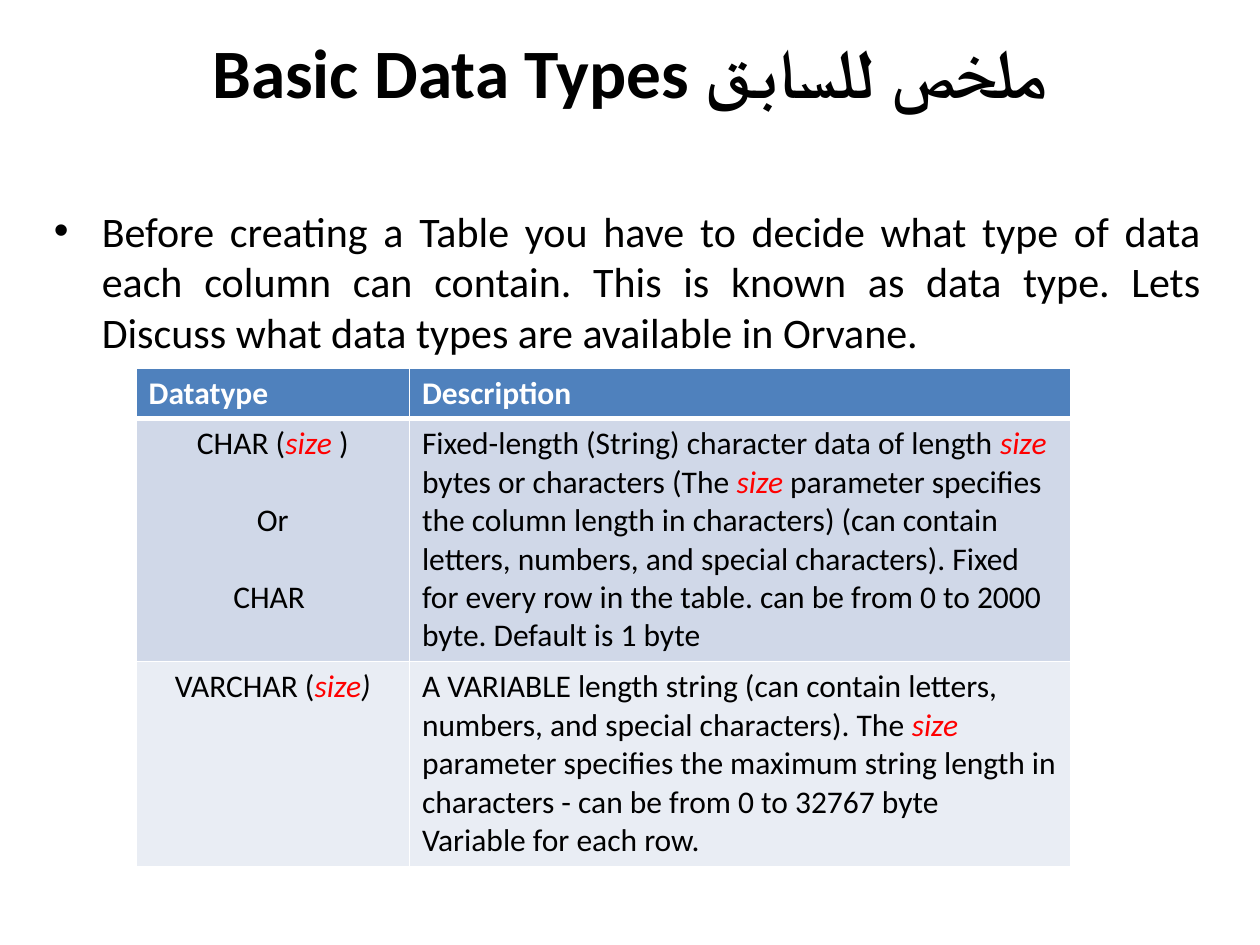
from lxml.etree import SubElement
from pptx import Presentation
from pptx.dml.color import RGBColor
from pptx.enum.text import MSO_ANCHOR, PP_ALIGN
from pptx.oxml.ns import qn
from pptx.util import Inches, Pt

COLORS = {
    "black": "000000", "white": "FFFFFF", "red": "FF0000",
    "head": "4F81BD", "odd": "D0D8E8", "even": "E9EDF4",
}
FONT = "Calibri"
SIZE = "size"  # mark for red italic runs
LINE = 22  # height in points of one table text line

# Each cell is a list of paragraphs, each paragraph a list of runs
ROWS = [
    ([["Datatype"]], [["Description"]]),
    (
        [["CHAR (", "size ", ")"], ["Or"], ["CHAR "]],
        [["Fixed-length (String) character data of length ", "size ",
          "bytes or characters (The ", "size ",
          "parameter specifies the column length in characters) (can contain "
          "letters, numbers, and special characters). Fixed for every row in "
          "the table. can be from 0 to 2000 byte. Default is 1 byte"]],
    ),
    (
        [["VARCHAR (", "size", ")"]],
        [["A VARIABLE length string (can contain letters, numbers, and "
          "special characters). The ", "size ",
          "parameter specifies the maximum string length in characters - "
          "can be from 0 to 32767 byte"],
         ["Variable for each row."]],
    ),
]


def rgb(name):
    return RGBColor.from_string(COLORS[name])


def add_run(para, text, size, color="black", bold=False, italic=False):
    run = para.add_run()
    run.text = text
    font = run.font
    font.name, font.size = FONT, Pt(size)
    font.bold, font.italic = bold, italic
    font.color.rgb = rgb(color)


def add_frame(slide, box):
    frame = slide.shapes.add_textbox(*map(Inches, box)).text_frame
    frame.word_wrap = True
    return frame


def add_title(slide, box):
    frame = add_frame(slide, box)
    frame.vertical_anchor = MSO_ANCHOR.MIDDLE
    para = frame.paragraphs[0]
    para.alignment = PP_ALIGN.CENTER
    add_run(para, "Basic Data Types ملخص للسابق", 39.6, bold=True)


def add_intro(slide, box):
    para = add_frame(slide, box).paragraphs[0]
    para.alignment = PP_ALIGN.JUSTIFY
    # Hanging bullet
    props = para._p.get_or_add_pPr()
    props.set("marL", str(Inches(0.38)))
    props.set("indent", str(Inches(-0.38)))
    SubElement(props, qn("a:buFont"), typeface="Arial")
    SubElement(props, qn("a:buChar"), char="•")
    add_run(para, "Before creating a Table you have to decide what type of data "
            "each column can contain. This is known as data type. Lets "
            "Discuss what data types are available in Orvane.", 24)


def add_edges(cell, head):
    props = cell._tc.get_or_add_tcPr()
    for side in "LRTB":
        width = 3 if head and side == "B" else 1
        line = SubElement(props, qn(f"a:ln{side}"), w=str(Pt(width)))
        fill = SubElement(line, qn("a:solidFill"))
        SubElement(fill, qn("a:srgbClr"), val=COLORS["white"])


def fill_cell(cell, paras, row, col):
    head = row == 0
    add_edges(cell, head)
    cell.fill.solid()
    cell.fill.fore_color.rgb = rgb("head" if head else "odd" if row % 2 else "even")
    frame = cell.text_frame
    for i, runs in enumerate(paras):
        para = frame.add_paragraph() if i else frame.paragraphs[0]
        name = col == 0 and not head
        para.alignment = PP_ALIGN.CENTER if name else PP_ALIGN.LEFT
        if name and i:
            para.space_before = Pt(LINE)
        for text in runs:
            mark = text.strip() == SIZE
            color = "white" if head else "red" if mark else "black"
            # The closing bracket of VARCHAR is italic too
            slant = mark or (text == ")" and runs[0].startswith("VARCHAR"))
            add_run(para, text, 18, color, head, slant)


def add_types(slide, box):
    table = slide.shapes.add_table(len(ROWS), 2, *map(Inches, box)).table
    for column, width in zip(table.columns, (2.17, 5.25)):
        column.width = Inches(width)
    for line, height in zip(table.rows, (0.4, 1.93, 1.63)):
        line.height = Inches(height)
    for r, cells in enumerate(ROWS):
        for c, paras in enumerate(cells):
            fill_cell(table.cell(r, c), paras, r, c)


def main():
    deck = Presentation()
    deck.slide_width, deck.slide_height = Inches(10), Inches(7.5)
    slide = deck.slides.add_slide(deck.slide_layouts[6])
    add_title(slide, (0.5, 0.25, 9, 0.62))
    add_intro(slide, (0.33, 1.58, 9.3, 5.09))
    add_types(slide, (1.08, 2.92, 7.42, 3.96))
    deck.save("out.pptx")


if __name__ == "__main__":
    main()
